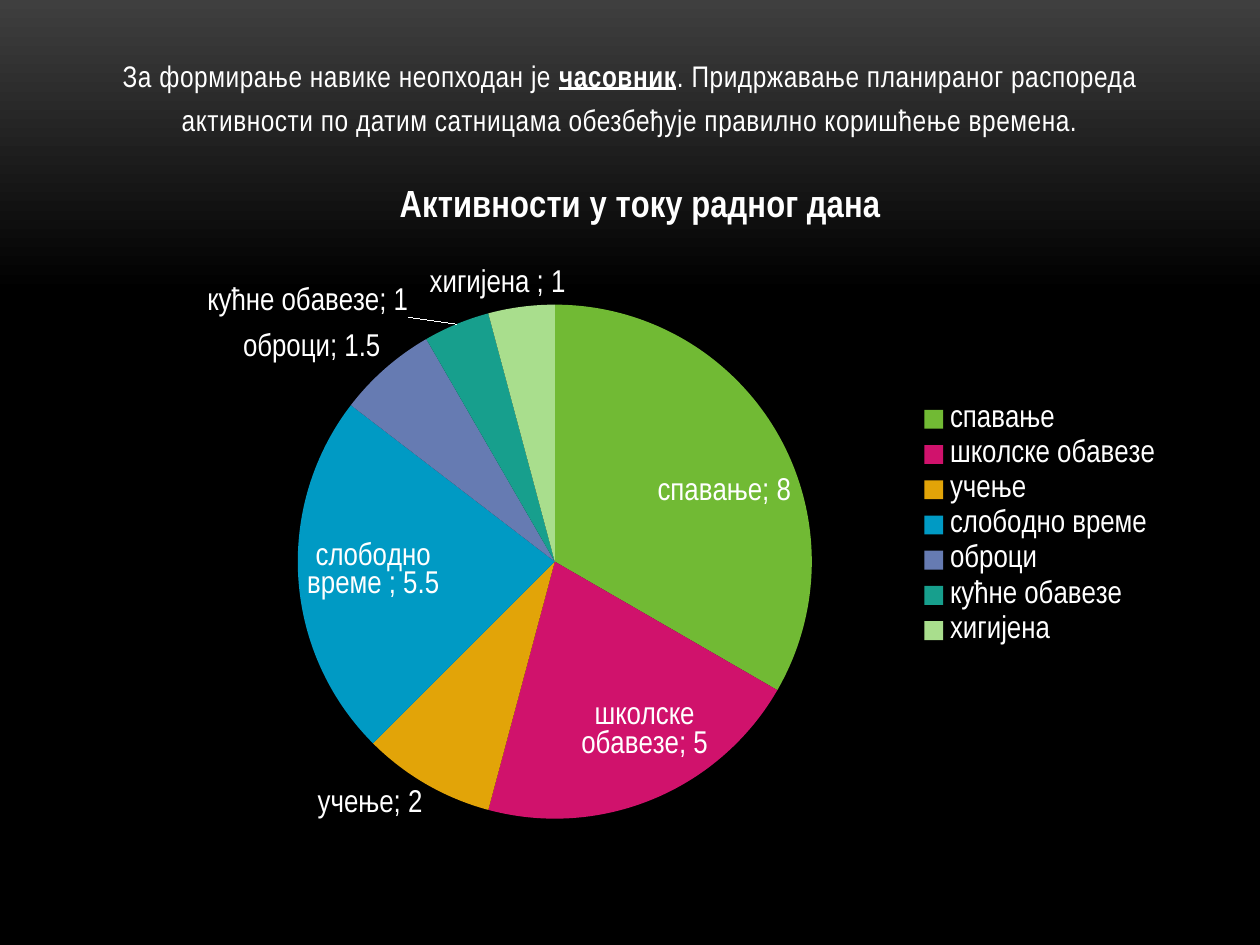
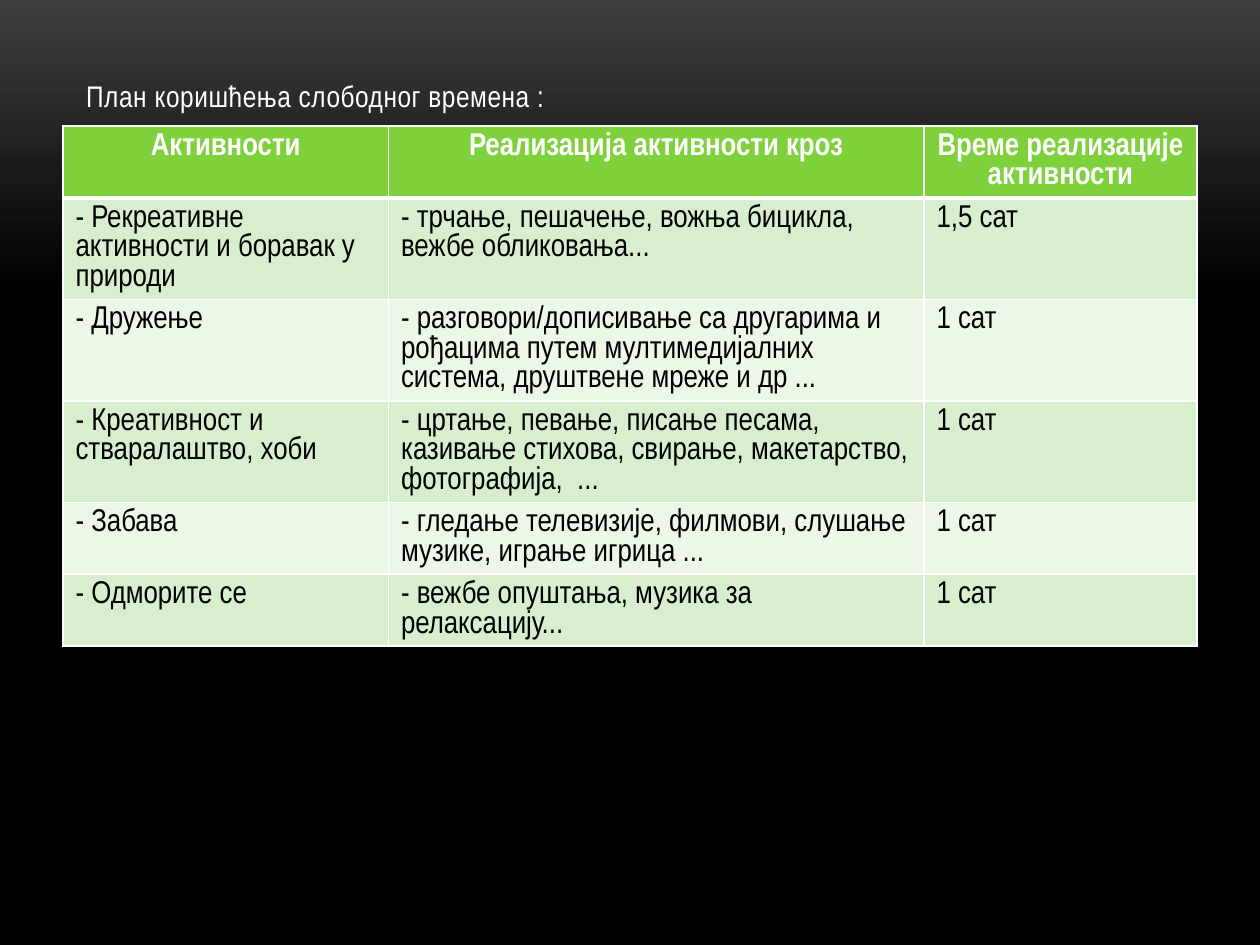
"""Two slides on daily habits: an activity pie chart and a free-time plan."""
from copy import deepcopy
from dataclasses import dataclass
from typing import Any

from lxml import etree
from pptx import Presentation
from pptx import util as u
from pptx.chart.data import CategoryChartData
from pptx.dml.color import RGBColor
from pptx.enum import chart as charts
from pptx.enum import text
from pptx.oxml import parse_xml
from pptx.oxml.ns import nsdecls, qn

COLOURS = {
    "white": "FFFFFF", "black": "000000", "glow": "3F3F3F",
    "header": "7FD13B", "odd": "D8EECE", "even": "ECF7E8",
}
FONT = "Arial Narrow"
UNIT = u.Inches(10) // 120
TITLE_FORMAT = {"name": FONT, "size": u.Pt(17), "bold": False, "underline": False}
EMPHASIS = {"bold": True, "underline": True}
BODY_FORMAT = {"name": FONT, "size": u.Pt(18), "bold": False}
HEADING_FORMAT = BODY_FORMAT | {"bold": True}
CHART_TITLE_FORMAT = HEADING_FORMAT | {"size": u.Pt(21.6)}


@dataclass(frozen=True)
class Region:
    """A place on the 120 by 90 grid of the slide."""
    column: int
    row: int
    columns: int
    rows: int

    def lengths(self) -> tuple[int, int, int, int]:
        """Return left, top, width and height."""
        return (self.column * UNIT, self.row * UNIT,
                self.columns * UNIT, self.rows * UNIT)


@dataclass(frozen=True)
class Slice:
    """One activity of the day, in hours."""
    activity: str
    hours: float
    colour: str


@dataclass(frozen=True)
class Plan:
    """One row of the free-time plan."""
    activity: str
    practice: str
    duration: str


SLICES = [
    Slice("спавање", 8, "71BA34"),
    Slice("школске обавезе", 5, "D0126C"),
    Slice("учење", 2, "E2A408"),
    Slice("слободно време ", 5.5, "009AC4"),
    Slice("оброци", 1.5, "667BB2"),
    Slice("кућне обавезе", 1, "179F8D"),
    Slice("хигијена ", 1, "A9DE8D"),
]
PLANS = [
    Plan("Активности", "Реализација активности кроз", "Време реализације активности"),
    Plan("- Рекреативне активности и боравак у природи",
         "- трчање, пешачење, вожња бицикла, вежбе обликовања...", "1,5 сат"),
    Plan("- Дружење",
         "- разговори/дописивање са другарима и рођацима путем мултимедијалних "
         "система, друштвене мреже и др ...", "1 сат"),
    Plan("- Креативност и стваралаштво, хоби",
         "- цртање, певање, писање песама, казивање стихова, свирање, макетарство, "
         "фотографија,  ...", "1 сат"),
    Plan("- Забава",
         "- гледање телевизије, филмови, слушање музике, играње игрица ...", "1 сат"),
    Plan("- Одморите се", "- вежбе опуштања, музика за релаксацију...", "1 сат"),
]
PLAN_COLUMNS = (31, 51, 26)
PLAN_ROW = 5


def rgb(name: str) -> RGBColor:
    """Look up a named colour."""
    return RGBColor.from_string(COLOURS[name])


def style(target: Any, values: dict[str, Any]) -> None:
    """Set each attribute of the target."""
    for name, value in values.items():
        setattr(target, name, value)


def style_font(font: Any, values: dict[str, Any], colour: str = "white") -> None:
    """Format a font and colour it."""
    style(font, values)
    font.color.rgb = rgb(colour)


def paint_background(master: Any) -> None:
    """Give every slide a dark gradient that is lighter at the top."""
    fill = master.background.fill
    fill.gradient()
    fill.gradient_angle = 270
    for stop, (position, colour) in zip(fill.gradient_stops, ((0, "glow"), (0.31, "black"))):
        stop.position = position
        stop.color.rgb = rgb(colour)
    stops = master.background._cSld.find(".//" + qn("a:gsLst"))
    end = deepcopy(stops[-1])
    end.set("pos", "100000")
    stops.append(end)


def add_page(deck: Any, region: Region, spans: list[tuple[str, dict[str, Any]]],
             alignment: text.PP_ALIGN) -> Any:
    """Add a slide with its formatted introduction as title."""
    page = deck.slides.add_slide(deck.slide_layouts[5])
    box = page.shapes.title
    style(box, dict(zip(("left", "top", "width", "height"), region.lengths())))
    style(box.text_frame, {"word_wrap": True, "auto_size": text.MSO_AUTO_SIZE.NONE,
                           "vertical_anchor": text.MSO_ANCHOR.TOP})
    para = box.text_frame.paragraphs[0]
    style(para, {"alignment": alignment, "line_spacing": 1.25})
    for words, extra in spans:
        span = para.add_run()
        span.text = words
        style_font(span.font, TITLE_FORMAT | extra)
        span.font._element.set("spc", "30")
    return page


def set_plot_layout(chart: Any, shares: dict[str, float]) -> None:
    """Place the pie by shares of the chart's size."""
    area = chart._chartSpace.find(".//" + qn("c:plotArea"))
    for old in area.findall(qn("c:layout")):
        area.remove(old)
    layout = parse_xml(f'<c:layout {nsdecls("c")}><c:manualLayout/></c:layout>')
    settings = {"layoutTarget": "inner", "xMode": "edge", "yMode": "edge"} | shares
    for name, value in settings.items():
        etree.SubElement(layout[0], qn(f"c:{name}")).set("val", str(value))
    area.insert(0, layout)


def add_activity_pie(page: Any, region: Region) -> None:
    """Draw the hours of a working day as a pie chart."""
    data = CategoryChartData()
    data.categories = [item.activity for item in SLICES]
    data.add_series("Series 1", [item.hours for item in SLICES])
    chart = page.shapes.add_chart(charts.XL_CHART_TYPE.PIE, *region.lengths(), data).chart
    style_font(chart.font, BODY_FORMAT)
    chart.has_title = True
    span = chart.chart_title.text_frame.paragraphs[0].add_run()
    span.text = "Активности у току радног дана"
    style_font(span.font, CHART_TITLE_FORMAT)
    chart.has_legend = True
    style(chart.legend, {"position": charts.XL_LEGEND_POSITION.RIGHT,
                         "include_in_layout": False})
    plot = chart.plots[0]
    style(plot, {"vary_by_categories": True, "has_data_labels": True})
    style(plot.data_labels, {"show_value": True, "show_category_name": True,
                             "show_percentage": False,
                             "position": charts.XL_LABEL_POSITION.BEST_FIT})
    style_font(plot.data_labels.font, BODY_FORMAT)
    for index, item in enumerate(SLICES):
        fill = plot.series[0].points[index].format.fill
        fill.solid()
        fill.fore_color.rgb = RGBColor.from_string(item.colour)
    set_plot_layout(chart, {"x": 0.18, "y": 0.2, "w": 0.48, "h": 0.7})


def add_borders(cell: Any, widths: dict[str, int]) -> None:
    """Draw white cell borders with widths in points."""
    properties = cell._tc.get_or_add_tcPr()
    for index, (side, width) in enumerate(widths.items()):
        properties.insert(index, parse_xml(
            f'<a:ln{side} {nsdecls("a")} w="{u.Pt(width)}"><a:solidFill>'
            f'<a:srgbClr val="{COLOURS["white"]}"/></a:solidFill></a:ln{side}>'))


def fill_cell(cell: Any, words: str, row: int) -> None:
    """Write and format one cell of the plan."""
    heading = row == 0
    cell.fill.solid()
    cell.fill.fore_color.rgb = rgb("header" if heading else "odd" if row % 2 else "even")
    para = cell.text_frame.paragraphs[0]
    para.alignment = text.PP_ALIGN.CENTER if heading else text.PP_ALIGN.LEFT
    span = para.add_run()
    span.text = words
    style_font(span.font, HEADING_FORMAT if heading else BODY_FORMAT,
               "white" if heading else "black")
    add_borders(cell, {"L": 1, "R": 1, "T": 3 if row == 1 else 1, "B": 3 if heading else 1})


def add_plan_table(page: Any, column: int, row: int) -> None:
    """Draw the free-time plan as a banded table."""
    region = Region(column, row, sum(PLAN_COLUMNS), PLAN_ROW * len(PLANS))
    table = page.shapes.add_table(len(PLANS), len(PLAN_COLUMNS), *region.lengths()).table
    for part, columns in zip(table.columns, PLAN_COLUMNS):
        part.width = columns * UNIT
    for index, plan in enumerate(PLANS):
        words = (plan.activity, plan.practice, plan.duration)
        for cell, content in zip(table.rows[index].cells, words):
            fill_cell(cell, content, index)


def main() -> None:
    """Build and save the deck."""
    deck = Presentation()
    style(deck, {"slide_width": 120 * UNIT, "slide_height": 90 * UNIT})
    paint_background(deck.slide_master)

    page = add_page(deck, Region(8, 4, 104, 79), [
        ("За формирање навике неопходан је ", {}),
        ("часовник", EMPHASIS),
        (". Придржавање планираног распореда активности по датим сатницама "
         "обезбеђује правилно коришћење времена.", {}),
    ], text.PP_ALIGN.CENTER)
    add_activity_pie(page, Region(10, 15, 102, 70))

    page = add_page(deck, Region(7, 6, 107, 81),
                    [("План коришћења слободног времена :", {})], text.PP_ALIGN.LEFT)
    add_plan_table(page, 6, 12)
    deck.save("out.pptx")


if __name__ == "__main__":
    main()
